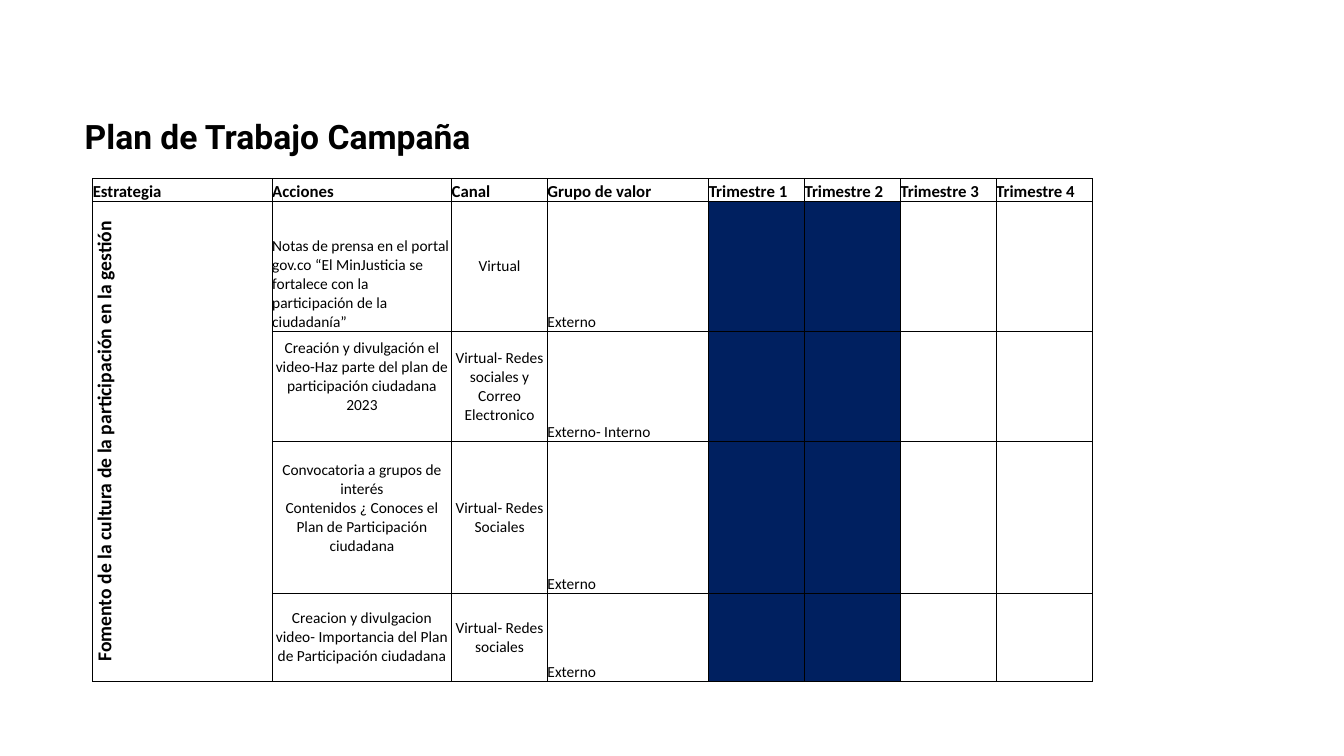
"""Build the campaign work plan slide."""
from dataclasses import dataclass

from lxml import etree
from pptx import Presentation
from pptx import util as u
from pptx.dml.color import RGBColor
from pptx.enum import text
from pptx.oxml import ns

LEFT, CENTER = text.PP_ALIGN.LEFT, text.PP_ALIGN.CENTER
MIDDLE, BOTTOM = text.MSO_ANCHOR.MIDDLE, text.MSO_ANCHOR.BOTTOM


@dataclass(frozen=True)
class Theme:
    ink: str = "000000"
    paper: str = "FFFFFF"
    scheduled: str = "002060"
    title_font: str = "Roboto"
    table_font: str = "Calibri"
    title_size: int = 24
    header_size: int = 12
    strategy_size: int = 14
    body_size: int = 11
    border: float = 0.5


class PlanSlide:
    def __init__(self, deck, theme):
        self.theme = theme
        self.page = deck.slides.add_slide(deck.slide_layouts[5])

    def style(self, para, font, size, bold, align):
        para.alignment = align
        para.font.name = font
        para.font.size = u.Pt(size)
        para.font.bold = bold
        para.font.color.rgb = RGBColor.from_string(self.theme.ink)

    def title(self, words, left, top, width, height):
        box = self.page.shapes.title
        box.left, box.top = u.Inches(left), u.Inches(top)
        box.width, box.height = u.Inches(width), u.Inches(height)
        frame = box.text_frame
        frame.text = words
        frame.word_wrap = True
        frame.vertical_anchor = text.MSO_ANCHOR.TOP
        frame.auto_size = text.MSO_AUTO_SIZE.SHAPE_TO_FIT_TEXT
        self.style(frame.paragraphs[0], self.theme.title_font,
                   self.theme.title_size, True, LEFT)

    def table(self, left, top, widths, heights):
        frame = self.page.shapes.add_table(
            len(heights), len(widths), u.Inches(left), u.Inches(top),
            u.Inches(sum(widths)), u.Inches(sum(heights)))
        grid = frame.table
        grid.first_row = grid.horz_banding = False
        for column, width in zip(grid.columns, widths):
            column.width = u.Inches(width)
        for row, height in zip(grid.rows, heights):
            row.height = u.Inches(height)
        for cell in grid.iter_cells():
            cell.margin_left = cell.margin_right = 0
            cell.margin_top = cell.margin_bottom = 0
            self.fill(cell, self.theme.paper)
            self.outline(cell)
        return grid

    def fill(self, cell, color):
        cell.fill.solid()
        cell.fill.fore_color.rgb = RGBColor.from_string(color)

    def outline(self, cell):
        properties = cell._tc.get_or_add_tcPr()
        for index, side in enumerate(("lnL", "lnR", "lnT", "lnB")):
            line = etree.Element(ns.qn(f"a:{side}"), w=str(u.Pt(self.theme.border)))
            solid = etree.SubElement(line, ns.qn("a:solidFill"))
            etree.SubElement(solid, ns.qn("a:srgbClr"), val=self.theme.ink)
            properties.insert(index, line)

    def label(self, cell, words, size, bold=False, align=LEFT, anchor=BOTTOM, below=0):
        cell.text = words
        cell.vertical_anchor = anchor
        cell.margin_bottom = u.Inches(below)
        for para in cell.text_frame.paragraphs:
            self.style(para, self.theme.table_font, size, bold, align)

    def strategy(self, first, last, words):
        first.merge(last)
        self.label(first, words, self.theme.strategy_size, True, CENTER)
        first._tc.get_or_add_tcPr().set("vert", "vert270")


HEADERS = ["Estrategia", "Acciones", "Canal", "Grupo de valor",
           *(f"Trimestre {number}" for number in range(1, 5))]
ACTIONS = [
    ("Notas de prensa en el portal gov.co “El MinJusticia se fortalece "
     "con la participación de la ciudadanía”", LEFT, BOTTOM, 0, "Virtual", "Externo"),
    ("Creación y divulgación el video-Haz parte del plan de participación "
     "ciudadana 2023", CENTER, MIDDLE, 0.19,
     "Virtual- Redes sociales y Correo Electronico", "Externo- Interno"),
    ("Convocatoria a grupos de interés\nContenidos ¿ Conoces el Plan de "
     "Participación ciudadana", CENTER, MIDDLE, 0.19,
     "Virtual- Redes Sociales", "Externo"),
    ("Creacion y divulgacion video- Importancia del Plan de Participación "
     "ciudadana", CENTER, MIDDLE, 0, "Virtual- Redes sociales", "Externo"),
]


def main():
    deck = Presentation()
    deck.slide_width, deck.slide_height = u.Inches(13.33), u.Inches(7.5)
    theme = Theme()
    slide = PlanSlide(deck, theme)
    slide.title("Plan de Trabajo Campaña", 0.74, 1.1, 10.45, 0.5)
    grid = slide.table(0.92, 1.77, [1.78, 1.78, 0.95, 1.6] + [0.95] * 4,
                       [0.23, 1.29, 1.09, 1.51, 0.87])
    for column, header in enumerate(HEADERS):
        slide.label(grid.cell(0, column), header, theme.header_size, True)
    slide.strategy(grid.cell(1, 0), grid.cell(4, 0),
                   "Fomento de la cultura de la participación en la gestión")
    for row, (action, align, anchor, below, channel, group) in enumerate(ACTIONS, 1):
        slide.label(grid.cell(row, 1), action, theme.body_size,
                    align=align, anchor=anchor, below=below)
        slide.label(grid.cell(row, 2), channel, theme.body_size,
                    align=CENTER, anchor=MIDDLE)
        slide.label(grid.cell(row, 3), group, theme.body_size)
        for quarter in (4, 5):
            slide.fill(grid.cell(row, quarter), theme.scheduled)
    deck.save("out.pptx")


if __name__ == "__main__":
    main()
